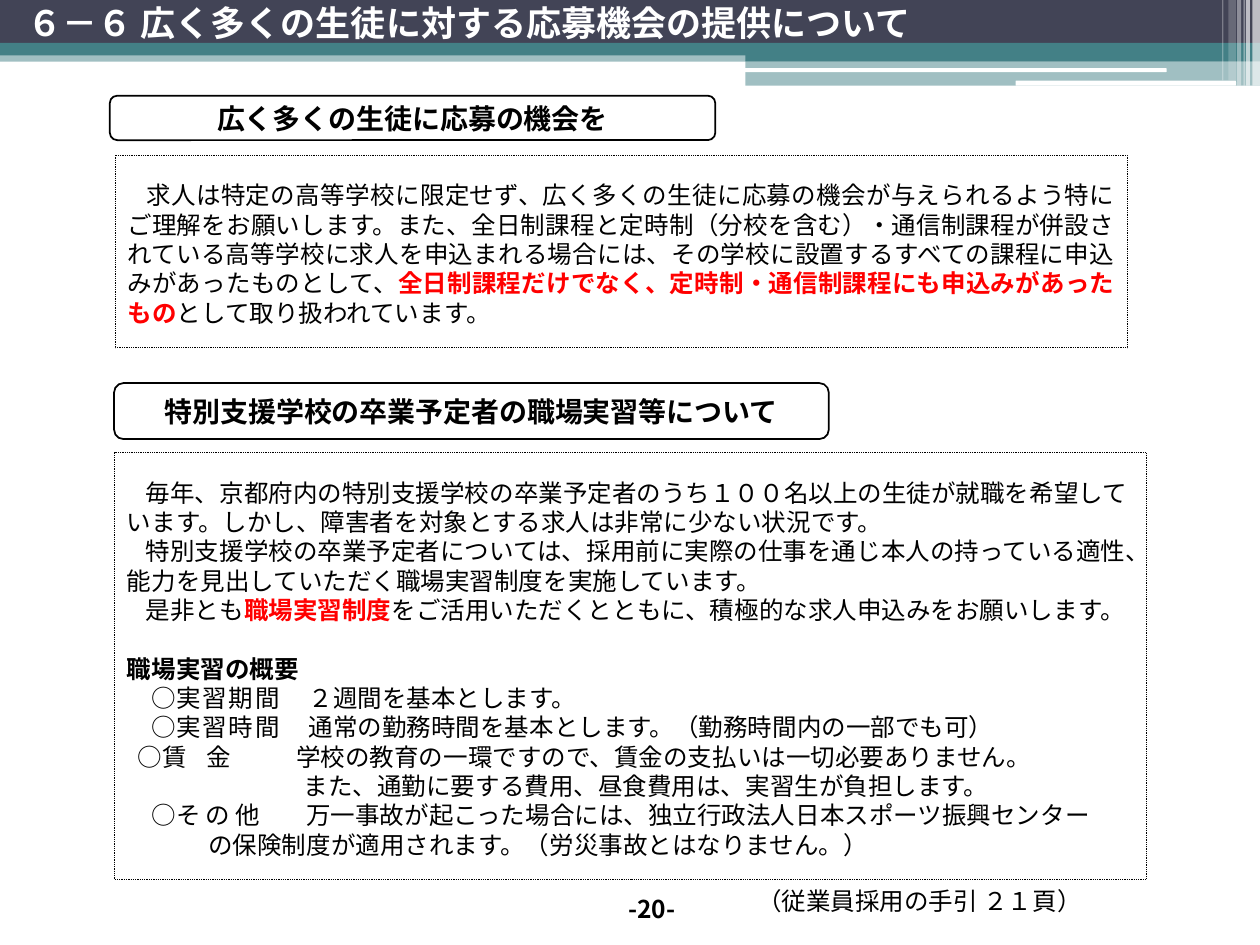
from dataclasses import dataclass

from lxml import etree
from pptx import Presentation
from pptx.dml.color import RGBColor
from pptx.enum.dml import MSO_LINE
from pptx.enum.shapes import MSO_SHAPE
from pptx.enum.text import MSO_ANCHOR, PP_ALIGN
from pptx.oxml.ns import qn
from pptx.util import Pt

RECT, ROUNDED = MSO_SHAPE.RECTANGLE, MSO_SHAPE.ROUNDED_RECTANGLE
LEFT, CENTER, JUSTIFY = PP_ALIGN.LEFT, PP_ALIGN.CENTER, PP_ALIGN.JUSTIFY
TOP, MIDDLE = MSO_ANCHOR.TOP, MSO_ANCHOR.MIDDLE
DOTTED = MSO_LINE.ROUND_DOT

NAVY = RGBColor(0x42, 0x44, 0x56)
TEAL = RGBColor(0x43, 0x80, 0x86)
WHITE = RGBColor(0xFF, 0xFF, 0xFF)
BLACK = RGBColor(0x00, 0x00, 0x00)
RED = RGBColor(0xFF, 0x00, 0x00)

SANS, SERIF = "Noto Sans CJK JP", "Cambria"
BODY_SIZE, LINE_PITCH, FIRST_INDENT = 14, 16.75, 10.8


@dataclass(frozen=True)
class Box:
    left: float
    top: float
    width: float
    height: float


@dataclass(frozen=True)
class Band:
    box: Box
    color: RGBColor
    opacity: int = 100
    preset: MSO_SHAPE = RECT


@dataclass(frozen=True)
class Span:
    text: str
    size: float = BODY_SIZE
    color: RGBColor = BLACK
    bold: bool = False
    font: str = SANS
    tracking: float = 0


@dataclass(frozen=True)
class Para:
    spans: tuple[Span, ...]
    align: PP_ALIGN = LEFT
    margin: float = 0
    indent: float = 0
    before: float = 0
    pitch: float | None = LINE_PITCH


@dataclass(frozen=True)
class Item:
    label: str
    detail: str
    margin: float
    tracking: float
    gap_tracking: float


def add_panel(slide, box: Box, preset: MSO_SHAPE, color: RGBColor, opacity: int = 100):
    panel = slide.shapes.add_shape(
        preset, Pt(box.left), Pt(box.top), Pt(box.width), Pt(box.height))
    panel.shadow.inherit = False
    panel.fill.solid()
    panel.fill.fore_color.rgb = color
    panel.line.fill.background()
    if opacity < 100:
        clr = panel.fill._xPr.find(qn("a:solidFill"))[0]
        etree.SubElement(clr, qn("a:alpha")).set("val", str(opacity * 1000))
    return panel


def add_outlined(slide, box: Box, preset: MSO_SHAPE, weight: float):
    panel = add_panel(slide, box, preset, WHITE)
    panel.line.color.rgb = BLACK
    panel.line.width = Pt(weight)
    return panel


def add_label(slide, box: Box):
    return slide.shapes.add_textbox(
        Pt(box.left), Pt(box.top), Pt(box.width), Pt(box.height))


def add_span(paragraph, span: Span) -> None:
    run = paragraph.add_run()
    run.text = span.text
    run.font.size = Pt(span.size)
    run.font.bold = span.bold
    run.font.color.rgb = span.color
    run.font.name = span.font
    props = run._r.get_or_add_rPr()
    props.set("lang", "ja-JP")
    if span.tracking:
        props.set("spc", str(round(span.tracking * 100)))
    etree.SubElement(props, qn("a:ea")).set("typeface", SANS)


def write(shape, paras: list[Para], anchor: MSO_ANCHOR = TOP,
          side: float = 7.2, top: float = 3.6) -> None:
    frame = shape.text_frame
    frame.word_wrap = True
    frame.vertical_anchor = anchor
    frame.margin_left = frame.margin_right = Pt(side)
    frame.margin_top, frame.margin_bottom = Pt(top), Pt(min(top, 3.6))
    for index, para in enumerate(paras):
        paragraph = frame.add_paragraph() if index else frame.paragraphs[0]
        paragraph.alignment = para.align
        paragraph.space_before = Pt(para.before)
        if para.pitch:
            paragraph.line_spacing = Pt(para.pitch)
        props = paragraph._p.get_or_add_pPr()
        props.set("marL", str(Pt(para.margin)))
        props.set("indent", str(Pt(para.indent)))
        for span in para.spans:
            add_span(paragraph, span)


def add_heading(slide, box: Box, text: str) -> None:
    span = Span(text, 16, bold=True, font=SERIF)
    write(add_outlined(slide, box, ROUNDED, 1),
          [Para((span,), CENTER, pitch=None)], MIDDLE, side=2.88, top=0)


def add_body(slide, box: Box, paras: list[Para]) -> None:
    body = add_outlined(slide, box, RECT, 0.5)
    body.line.dash_style = DOTTED
    write(body, paras, top=14.6)


def item_para(item: Item) -> Para:
    return Para((Span("○"), Span(item.label, tracking=item.tracking),
                 Span("\u3000", tracking=item.gap_tracking), Span(item.detail)),
                margin=item.margin)


BANDS = [
    Band(Box(0, 28.8, 720, 6.5), TEAL, 50),
    Band(Box(0, 0, 720, 24.5), NAVY),
    Band(Box(0, 24.5, 720, 7.2), TEAL),
    Band(Box(426, 28, 294, 7), TEAL),
    Band(Box(426, 34.6, 294, 14.4), TEAL, 50),
    Band(Box(425.5, 39, 241.2, 2.2), WHITE, preset=ROUNDED),
    Band(Box(580.3, 46.1, 126, 2.9), WHITE, preset=ROUNDED),
]
# Right-edge stripes: left, width, height, opacity
STRIPES = [(715.7, 4.3, 49, 65), (712, 2.2, 49, 65), (710.6, 0.7, 49, 60),
           (707, 2.2, 49, 40), (702, 4.3, 46, 20), (698.4, 0.7, 46, 30)]

APPLICATION = [Para((
    Span("求人は特定の高等学校に限定せず、広く多くの生徒に応募の機会が与えられるよう特にご理解をお願いします。また、全日制課程と定時制（分校を含む）・通信制課程が併設されている高等学校に求人を申込まれる場合には、その学校に設置するすべての課程に申込みがあったものとして、"),
    Span("全日制課程だけでなく、定時制・通信制課程にも申込みがあったもの", color=RED, bold=True),
    Span("として取り扱われています。")), JUSTIFY, indent=FIRST_INDENT)]

TRAINING = [
    Para((Span("毎年、京都府内の特別支援学校の卒業予定者のうち１００名以上の生徒が就職を希望しています。しかし、障害者を対象とする求人は非常に少ない状況です。"),), indent=FIRST_INDENT),
    Para((Span("特別支援学校の卒業予定者については、採用前に実際の仕事を通じ本人の持っている適性、能力を見出していただく職場実習制度を実施しています。"),), indent=FIRST_INDENT),
    Para((Span("是非とも"), Span("職場実習制度", color=RED, bold=True),
          Span("をご活用いただくとともに、積極的な求人申込みをお願いします。")), indent=FIRST_INDENT),
    Para((Span("職場実習の概要", bold=True),), before=LINE_PITCH),
    item_para(Item("実習期間", "２週間を基本とします。", 14, 1.1, 1.1)),
    item_para(Item("実習時間", "通常の勤務時間を基本とします。（勤務時間内の一部でも可）", 14, 1.1, 1.1)),
    item_para(Item("賃金", "学校の教育の一環ですので、賃金の支払いは一切必要ありません。", 6, 11.5, 11.5)),
    Para((Span("また、通勤に要する費用、昼食費用は、実習生が負担します。"),), margin=101),
    item_para(Item("その他", "万一事故が起こった場合には、独立行政法人日本スポーツ振興センター", 14, 3.1, 9)),
    Para((Span("の保険制度が適用されます。（労災事故とはなりません。）"),), margin=46.5),
]


def main() -> None:
    deck = Presentation()
    deck.slide_width, deck.slide_height = Pt(720), Pt(540)
    slide = deck.slides.add_slide(deck.slide_layouts[6])

    # Header decoration and title
    stripes = [Band(Box(left, 0, width, height), WHITE, opacity)
               for left, width, height, opacity in STRIPES]
    for band in BANDS + stripes:
        add_panel(slide, band.box, band.preset, band.color, band.opacity)
    title = Span("６－６ 広く多くの生徒に対する応募機会の提供について", 20, WHITE, True)
    write(add_label(slide, Box(8.64, -6.5, 588, 39)), [Para((title,), pitch=None)], MIDDLE)

    # Section bodies and headings
    add_body(slide, Box(65.8, 88.6, 578.4, 110.2), APPLICATION)
    add_body(slide, Box(65.5, 258.5, 589.5, 244.1), TRAINING)
    add_heading(slide, Box(62.8, 54.7, 346, 25.4), "広く多くの生徒に応募の機会を")
    add_heading(slide, Box(65.2, 218.9, 408.4, 32), "特別支援学校の卒業予定者の職場実習等について")

    # Page number and reference
    write(add_label(slide, Box(348.5, 505.4, 48.2, 27.4)),
          [Para((Span("-20-", bold=True),), CENTER, pitch=None)], MIDDLE)
    write(add_label(slide, Box(425.5, 502.6, 222.5, 24.5)),
          [Para((Span("（従業員採用の手引 ２１頁）"),))])

    deck.save("out.pptx")


if __name__ == "__main__":
    main()
